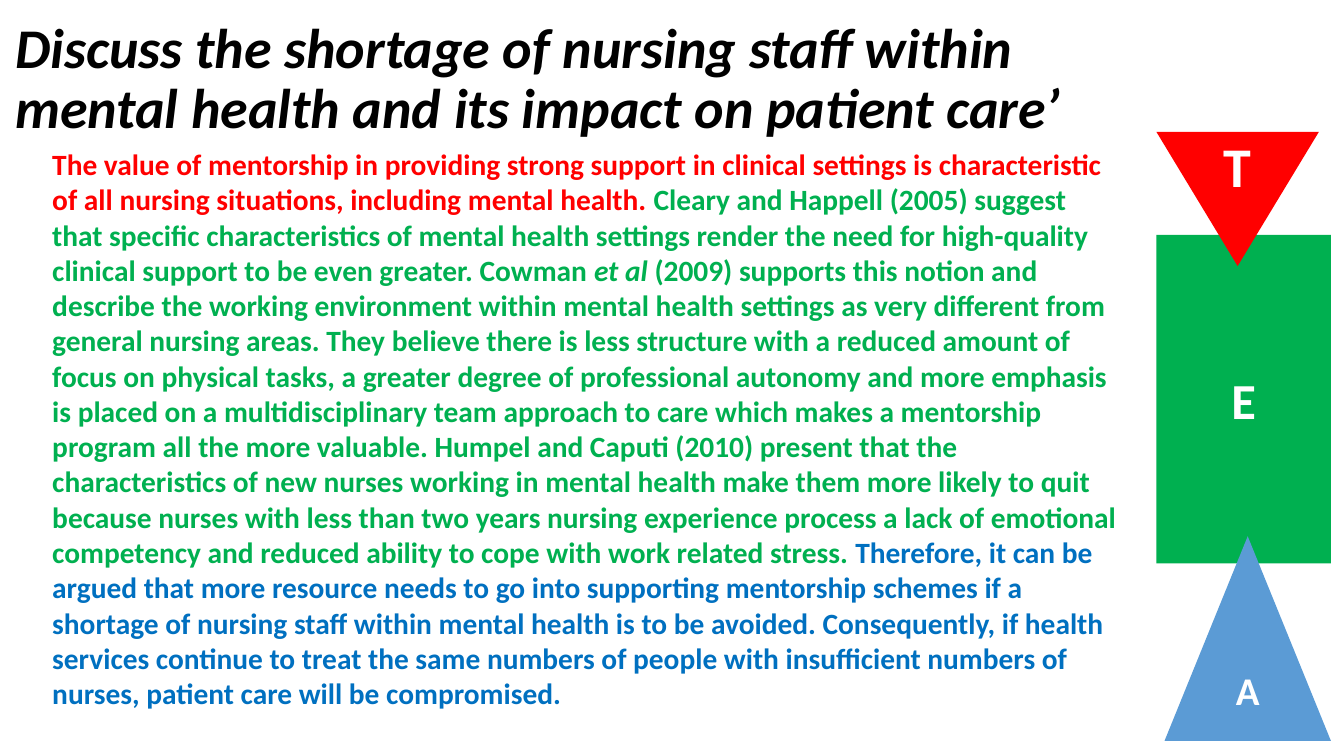
"""Build the slide that marks topic, evidence and analysis in a paragraph on mental health nursing."""
import pptx
import pptx.dml.color
import pptx.enum.shapes
import pptx.enum.text
import pptx.util

Inches = pptx.util.Inches
MSO_SHAPE = pptx.enum.shapes.MSO_SHAPE
PP_ALIGN = pptx.enum.text.PP_ALIGN
MSO_ANCHOR = pptx.enum.text.MSO_ANCHOR
MSO_AUTO_SIZE = pptx.enum.text.MSO_AUTO_SIZE

THEME = {
    "font": "Calibri",
    "colours": {"heading": "000000", "letter": "FFFFFF", "topic": "FF0000", "evidence": "00B050",
                "analysis": "0070C0", "analysis shape": "5B9BD5"},
    "sizes": {"heading": 40, "paragraph": 21, "topic": 40, "evidence": 36, "analysis": 28},
}


def colour(role):
    return pptx.dml.color.RGBColor.from_string(THEME["colours"][role])


def write(text, *, line, size, role, italic=False):
    run = line.add_run()
    run.text = text
    run.font.name = THEME["font"]
    run.font.size = pptx.util.Pt(THEME["sizes"][size])
    run.font.color.rgb = colour(role)
    run.font.bold = True
    run.font.italic = italic


deck = pptx.Presentation()
deck.slide_width, deck.slide_height = Inches(13.33), Inches(7.5)
slide = deck.slides.add_slide(deck.slide_layouts.get_by_name("Title Only"))

heading = slide.shapes.title
heading.left, heading.top, heading.width, heading.height = map(Inches, (0.05, 0.07, 11.5, 1.45))
heading.text_frame.auto_size = MSO_AUTO_SIZE.NONE
heading.text_frame.vertical_anchor = MSO_ANCHOR.MIDDLE
heading_line = heading.text_frame.paragraphs[0]
heading_line.alignment = PP_ALIGN.LEFT
heading_line.line_spacing = 0.9
write("Discuss the shortage of nursing staff within mental health and its impact on patient care’",
      line=heading_line, size="heading", role="heading", italic=True)

passages = [
    ("topic", False,
     "The value of mentorship in providing strong support in clinical settings is characteristic "
     "of all nursing situations, including mental health. "),
    ("evidence", False,
     "Cleary and Happell (2005) suggest that specific characteristics of mental health settings "
     "render the need for high-quality clinical support to be even greater. Cowman "),
    ("evidence", True, "et al "),
    ("evidence", False,
     "(2009) supports this notion and describe the working environment within mental health "
     "settings as very different from general nursing areas. They believe there is less structure "
     "with a reduced amount of focus on physical tasks, a greater degree of professional autonomy "
     "and more emphasis is placed on a multidisciplinary team approach to care which makes a "
     "mentorship program all the more valuable. Humpel and Caputi (2010) present that the "
     "characteristics of new nurses working in mental health make them more likely to quit because "
     "nurses with less than two years nursing experience process a lack of emotional competency "
     "and reduced ability to cope with work related stress. "),
    ("analysis", False,
     "Therefore, it can be argued that more resource needs to go into supporting mentorship "
     "schemes if a shortage of nursing staff within mental health is to be avoided. Consequently, "
     "if health services continue to treat the same numbers of people with insufficient numbers "
     "of nurses, patient care will be compromised."),
]
essay = slide.shapes.add_textbox(*map(Inches, (0.42, 1.4, 10.76, 5.76))).text_frame
essay.word_wrap = True
essay.auto_size = MSO_AUTO_SIZE.SHAPE_TO_FIT_TEXT
for part, italic, passage in passages:
    write(passage, line=essay.paragraphs[0], size="paragraph", role=part, italic=italic)

markers = [
    ("E", "evidence", "evidence", MSO_SHAPE.RECTANGLE, (11.47, 2.33, 1.73, 3.26)),
    ("A", "analysis", "analysis shape", MSO_SHAPE.ISOSCELES_TRIANGLE, (11.55, 5.32, 1.65, 2.03)),
    ("T", "topic", "topic", MSO_SHAPE.FLOWCHART_MERGE, (11.47, 1.31, 1.61, 1.33)),
]
for letter, part, fill, outline, place in markers:
    marker = slide.shapes.add_shape(outline, *map(Inches, place))
    marker.shadow.inherit = False
    marker.fill.solid()
    marker.fill.fore_color.rgb = colour(fill)
    marker.line.fill.background()
    marker.text_frame.vertical_anchor = MSO_ANCHOR.MIDDLE
    letter_line = marker.text_frame.paragraphs[0]
    letter_line.alignment = PP_ALIGN.CENTER
    write(letter, line=letter_line, size=part, role="letter")

deck.save("out.pptx")
